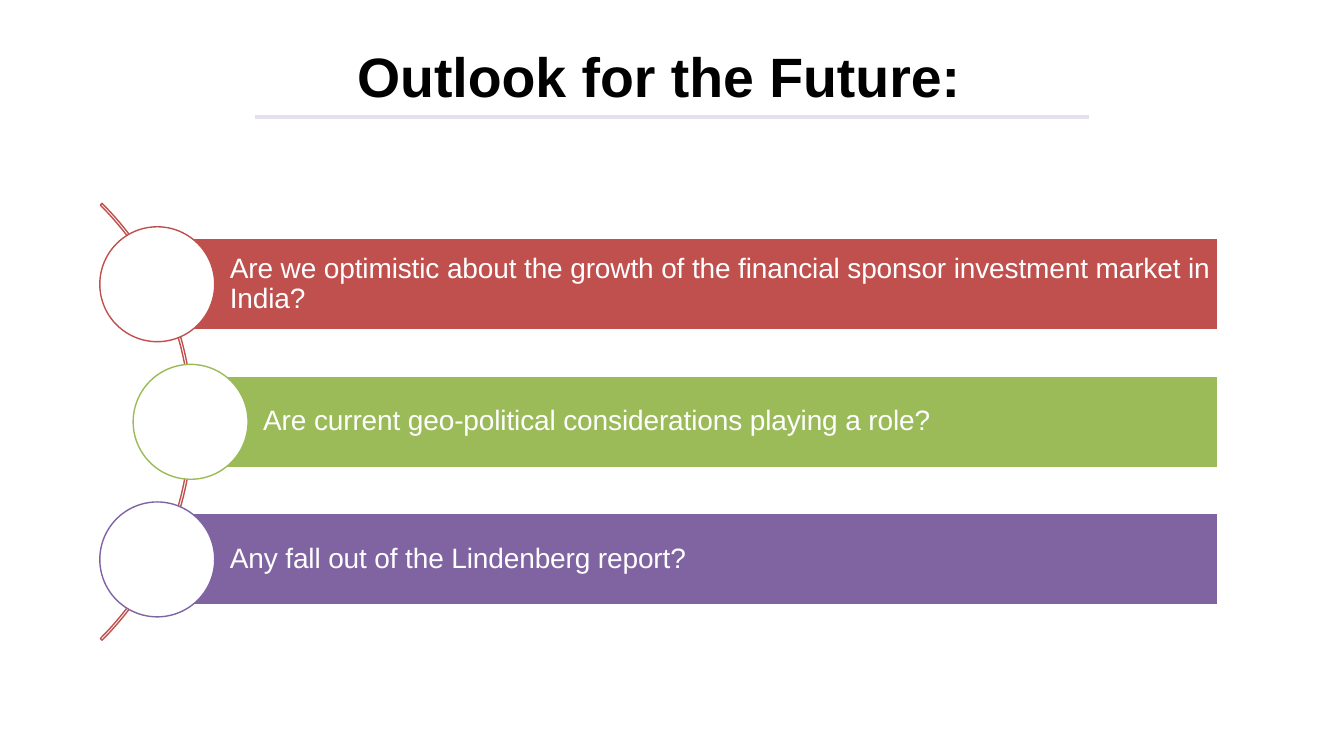
from dataclasses import dataclass

from lxml.etree import SubElement
from pptx import Presentation
from pptx.dml.color import RGBColor
from pptx.enum.shapes import MSO_CONNECTOR, MSO_SHAPE
from pptx.enum.text import MSO_ANCHOR, PP_ALIGN
from pptx.oxml.ns import qn
from pptx.util import Inches, Pt


@dataclass(frozen=True)
class Theme:
    font: str = "Arial"
    title_size: float = 39.6
    question_size: float = 20
    line_spacing: float = 0.9
    outline: float = 1
    rule_weight: float = 3
    black: str = "000000"
    white: str = "FFFFFF"
    red: str = "C0504D"
    green: str = "9BBB59"
    purple: str = "8064A2"
    lavender: str = "E6E0EC"


class SlideBuilder:
    """Draws on one slide; lengths are percent of its width (x) and height (y)."""

    def __init__(self, deck, theme):
        self.theme = theme
        self.column = deck.slide_width / 100
        self.row = deck.slide_height / 100
        self.shapes = deck.slides.add_slide(deck.slide_layouts[6]).shapes

    def scale(self, x, y):
        return round(x * self.column), round(y * self.row)

    def shape(self, preset, x, y, width, height, line, fill=None):
        item = self.shapes.add_shape(
            preset, *self.scale(x, y), *self.scale(width, height))
        item.shadow.inherit = False
        if fill:
            item.fill.solid()
            item.fill.fore_color.rgb = RGBColor.from_string(fill)
        else:
            item.fill.background()
        item.line.color.rgb = RGBColor.from_string(line)
        item.line.width = Pt(self.theme.outline)
        return item

    def set_text(self, frame, wording, size, color, align, bold=False):
        """Fill a text frame with one styled paragraph and return its run."""
        frame.word_wrap = True
        frame.vertical_anchor = MSO_ANCHOR.MIDDLE
        frame.text = wording
        paragraph = frame.paragraphs[0]
        paragraph.alignment = align
        paragraph.line_spacing = self.theme.line_spacing
        run = paragraph.runs[0]
        run.font.name, run.font.size, run.font.bold = self.theme.font, Pt(size), bold
        run.font.color.rgb = RGBColor.from_string(color)
        return run

    def title(self, wording, x, y, width, height):
        box = self.shapes.add_textbox(*self.scale(x, y), *self.scale(width, height))
        self.set_text(box.text_frame, wording, self.theme.title_size,
                      self.theme.black, PP_ALIGN.CENTER, bold=True)

    def rule(self, left, right, y):
        rule = self.shapes.add_connector(
            MSO_CONNECTOR.STRAIGHT, *self.scale(left, y), *self.scale(right, y))
        rule.line.color.rgb = RGBColor.from_string(self.theme.lavender)
        rule.line.width = Pt(self.theme.rule_weight)
        SubElement(rule._element.spPr, qn("a:effectLst"))

    def arc(self, x, middle, width, height):
        """Thin arc bulging right, from 315 to 45 degrees."""
        arc = self.shape(MSO_SHAPE.BLOCK_ARC, x, middle - height / 2,
                         width, height, self.theme.red)
        for index, value in enumerate((189, 27, 0.004)):
            arc.adjustments[index] = value

    def question(self, wording, color, left, right, middle):
        """Bar that starts at the centre of its circle."""
        bar_height, circle_width, circle_height = 12.1, 8.55, 15.2
        bar = self.shape(MSO_SHAPE.RECTANGLE, left, middle - bar_height / 2,
                         right - left, bar_height, self.theme.white, color)
        frame = bar.text_frame
        frame.margin_left = Inches(0.72)
        frame.margin_top = frame.margin_right = frame.margin_bottom = Inches(0.06)
        run = self.set_text(frame, wording, self.theme.question_size,
                            self.theme.white, PP_ALIGN.LEFT)
        run.font._element.set("spc", "-10")
        self.shape(MSO_SHAPE.OVAL, left - circle_width / 2, middle - circle_height / 2,
                   circle_width, circle_height, color, self.theme.white)


def main():
    deck = Presentation()
    deck.slide_width, deck.slide_height = Inches(13.33), Inches(7.5)
    theme = Theme()
    slide = SlideBuilder(deck, theme)

    center, pitch, bar_right = 55.8, 18.2, 90.62
    outer_left, inner_left = 11.7, 14.18
    questions = [
        ("Are we optimistic about the growth of the financial sponsor "
         "investment market in India?", theme.red, outer_left),
        ("Are current geo-political considerations playing a role?",
         theme.green, inner_left),
        ("Any fall out of the Lindenberg report?", theme.purple, outer_left),
    ]
    slide.arc(-31.66, center, 45.99, 81.73)
    for index, (wording, color, left) in enumerate(questions):
        slide.question(wording, color, left, bar_right, center + (index - 1) * pitch)

    slide.title("Outlook for the Future:", 5.78, 5.6, 86.5, 9.87)
    slide.rule(18.98, 81.02, 15.47)
    deck.save("out.pptx")


if __name__ == "__main__":
    main()
